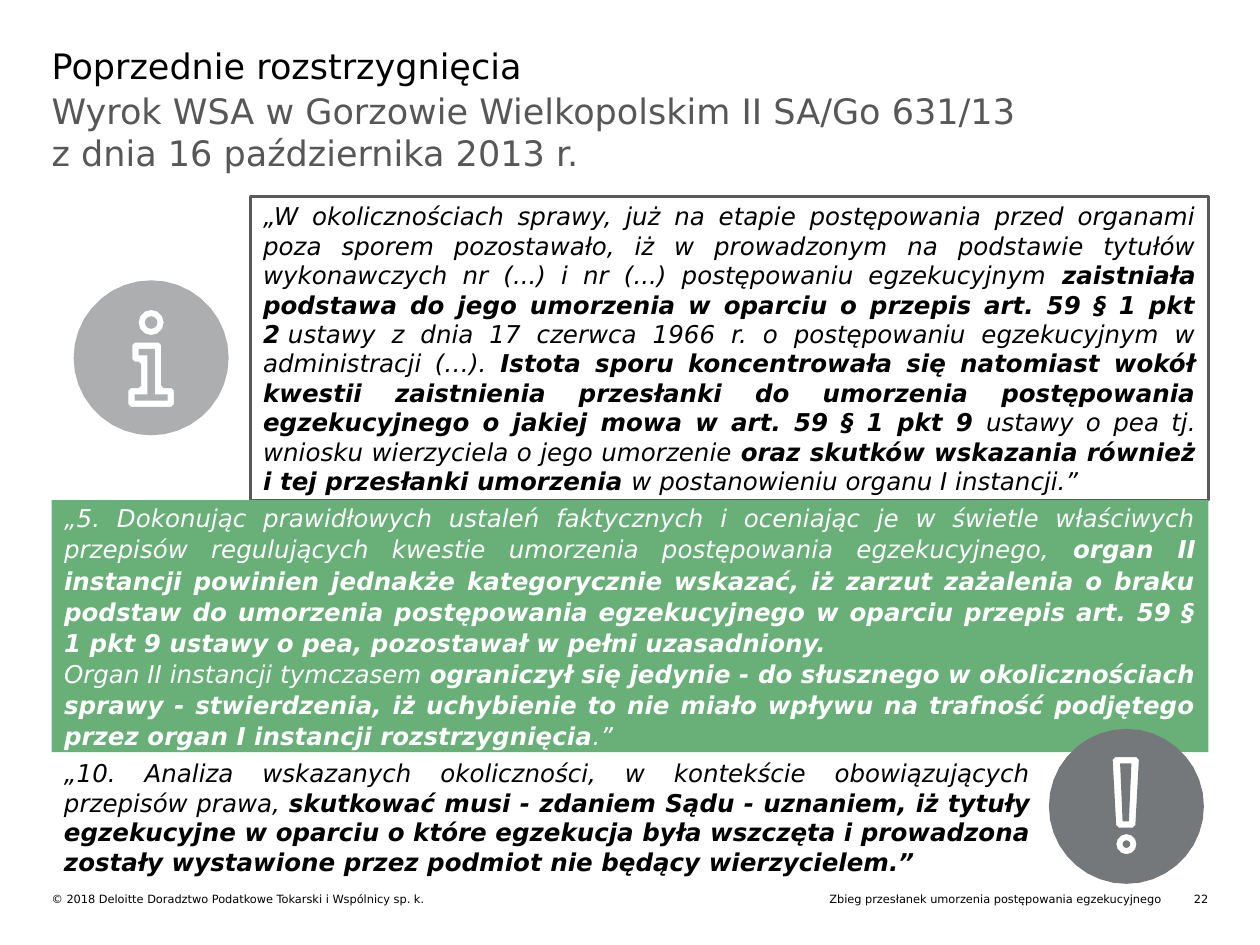
from math import cos, dist, pi, sin

from pptx import Presentation
from pptx.dml.color import RGBColor
from pptx.enum.shapes import MSO_SHAPE
from pptx.enum.text import MSO_ANCHOR, MSO_AUTO_SIZE, PP_ALIGN
from pptx.oxml.ns import qn
from pptx.util import Inches, Pt

RECT = MSO_SHAPE.RECTANGLE
TOP, MIDDLE = MSO_ANCHOR.TOP, MSO_ANCHOR.MIDDLE
LEFT, RIGHT, JUSTIFY = PP_ALIGN.LEFT, PP_ALIGN.RIGHT, PP_ALIGN.JUSTIFY
NO_FIT = MSO_AUTO_SIZE.NONE
NBSP = chr(160)

THEME = {
    "font": "DejaVu Sans",
    "heading": 20, "quote": 14, "footer": 6.5,
    "black": RGBColor(0, 0, 0),
    "white": RGBColor(255, 255, 255),
    "subtitle": RGBColor(0x57, 0x57, 0x57),
    "border": RGBColor(0x58, 0x5A, 0x5C),
    "green": RGBColor(0x69, 0xAF, 0x78),
    "info": RGBColor(0xAC, 0xAE, 0xB0),
    "alert": RGBColor(0x75, 0x78, 0x7B),
}

prs = Presentation()
prs.slide_width, prs.slide_height = Inches(10), Inches(7.5)
s = prs.slides.add_slide(prs.slide_layouts[1])

# Grid: one content column, three stacked quote rows
MARGIN = 0.41
WIDTH = 10 - 2 * MARGIN
INDENT = 1.99
ROWS = (1.56, 3.97, 5.97, 7.01)
FOOTER_TOP = 7.08
DISC = 0.615


def set_text(sp, paragraphs, size, color, align=LEFT, anchor=TOP, inset=0.0,
             italic=False, spacing=1.0):
    """Each paragraph is a list of runs that alternate regular and bold."""
    tf = sp.text_frame
    tf.word_wrap = True
    tf.auto_size = NO_FIT
    tf.vertical_anchor = anchor
    tf.margin_left = tf.margin_right = Inches(inset)
    tf.margin_top = tf.margin_bottom = Inches(inset / 2)
    for i, runs in enumerate(paragraphs):
        p = tf.paragraphs[0] if i == 0 else tf.add_paragraph()
        p.alignment = align
        p.line_spacing = spacing
        p.space_before = Pt(0)
        for j, text in enumerate(runs):
            r = p.add_run()
            r.text = text
            r.font.name = THEME["font"]
            r.font.size = Pt(THEME[size])
            r.font.color.rgb = THEME[color]
            r.font.bold = j % 2 == 1
            r.font.italic = italic


def add_icon(cx, cy, color, dot_y, radii, outer, inner, cut=0.02):
    """Disc with an outlined glyph cut out; glyph points are from its centre."""
    circles = [(0, DISC, 36), *((dot_y, radius, 12) for radius in radii)]
    contours = [
        [(radius * cos(k * 2 * pi / n), y + radius * sin(k * 2 * pi / n)) for k in range(n)]
        for y, radius, n in circles
    ]
    soft = []
    for i, point in enumerate(outer):
        for other in (outer[i - 1], outer[(i + 1) % len(outer)]):
            t = cut / dist(point, other)
            soft.append(tuple(a + (b - a) * t for a, b in zip(point, other)))
    contours += [soft, inner]
    fb = None
    for contour in contours:
        pts = [((cx + x) * 1000, (cy + y) * 1000) for x, y in contour]
        if fb is None:
            fb = s.shapes.build_freeform(*pts[0], scale=Inches(1) / 1000)
        else:
            fb.move_to(*pts[0])
        fb.add_line_segments(pts[1:], close=True)
    sp = fb.convert_to_shape()
    sp.shadow.inherit = False
    sp.fill.solid()
    sp.fill.fore_color.rgb = THEME[color]
    sp.line.fill.background()


# Title and subtitle
title, body = s.shapes.title, s.placeholders[1]
for sp, top, height in ((title, 0.35, 0.44), (body, 0.71, 0.83)):
    sp.left, sp.top = Inches(MARGIN), Inches(top)
    sp.width, sp.height = Inches(WIDTH), Inches(height)
set_text(title, [["Poprzednie rozstrzygnięcia"]], "heading", "black")
p = body.text_frame.paragraphs[0]
pPr = p._p.get_or_add_pPr()
pPr.set("marL", "0")
pPr.set("indent", "0")
pPr.append(pPr.makeelement(qn("a:buNone"), {}))
set_text(body, [["Wyrok WSA w Gorzowie Wielkopolskim II SA/Go 631/13"]],
         "heading", "subtitle")
p.add_line_break()
r = p.add_run()
r.text = "z dnia 16 października 2013 r."
r.font.name = THEME["font"]
r.font.size = Pt(THEME["heading"])
r.font.color.rgb = THEME["subtitle"]

# Quote panels
facts = [[
    "„W okolicznościach sprawy, już na etapie postępowania przed organami poza "
    "sporem pozostawało, iż w prowadzonym na podstawie tytułów wykonawczych "
    "nr (...) i nr (...) postępowaniu egzekucyjnym ",
    "zaistniała podstawa do jego umorzenia w oparciu o przepis art. 59 § 1 pkt 2",
    NBSP + "ustawy z dnia 17 czerwca 1966 r. o postępowaniu egzekucyjnym w "
    "administracji (…). ",
    "Istota sporu koncentrowała się natomiast wokół kwestii zaistnienia "
    "przesłanki do umorzenia postępowania egzekucyjnego o jakiej mowa w "
    "art. 59 § 1 pkt 9",
    " ustawy o pea tj. wniosku wierzyciela o jego umorzenie ",
    "oraz skutków wskazania również i tej przesłanki umorzenia ",
    "w postanowieniu organu I instancji.”",
]]
findings = [[
    "„5. Dokonując prawidłowych ustaleń faktycznych i oceniając je w świetle "
    "właściwych przepisów regulujących kwestie umorzenia postępowania "
    "egzekucyjnego, ",
    "organ II instancji powinien jednakże kategorycznie wskazać, iż zarzut "
    "zażalenia o braku podstaw do umorzenia postępowania egzekucyjnego w "
    "oparciu przepis art. 59 § 1 pkt 9 ustawy o pea, pozostawał w pełni "
    "uzasadniony.",
], [
    "Organ II instancji tymczasem ",
    "ograniczył się jedynie - do słusznego w okolicznościach sprawy - "
    "stwierdzenia, iż uchybienie to nie miało wpływu na trafność podjętego "
    "przez organ I instancji rozstrzygnięcia",
    ".”",
]]
conclusion = [[
    "„10. Analiza wskazanych okoliczności, w kontekście obowiązujących "
    "przepisów prawa, ",
    "skutkować musi - zdaniem Sądu - uznaniem, iż tytuły egzekucyjne w oparciu "
    "o które egzekucja była wszczęta i prowadzona zostały wystawione przez "
    "podmiot nie będący wierzycielem.”",
]]
panels = (
    (INDENT, MARGIN + WIDTH - INDENT, facts, "black", None, "border", 1.0),
    (MARGIN, WIDTH, findings, "white", "green", None, 1.06),
)
for row, (left, width, quote, color, fill, line, spacing) in enumerate(panels):
    sp = s.shapes.add_shape(RECT, Inches(left), Inches(ROWS[row]), Inches(width),
                            Inches(ROWS[row + 1] - ROWS[row]))
    sp.shadow.inherit = False
    if fill:
        sp.fill.solid()
        sp.fill.fore_color.rgb = THEME[fill]
    else:
        sp.fill.background()
    if line:
        sp.line.color.rgb = THEME[line]
        sp.line.width = Pt(1.5)
    else:
        sp.line.fill.background()
    set_text(sp, quote, "quote", color, JUSTIFY, MIDDLE, 0.1, True, spacing)

sp = s.shapes.add_textbox(Inches(MARGIN), Inches(ROWS[2]), Inches(7.87),
                          Inches(ROWS[3] - ROWS[2]))
set_text(sp, conclusion, "quote", "black", JUSTIFY, TOP, 0.1, True)

# Information and exclamation icons
add_icon(1.2, 2.84, "info", -0.28, (0.1, 0.05),
         [(-0.18, 0.39), (0.18, 0.39), (0.18, 0.24), (0.08, 0.24), (0.08, -0.12),
          (-0.15, -0.12), (-0.15, 0.03), (-0.08, 0.03), (-0.08, 0.24), (-0.18, 0.24)],
         [(-0.13, 0.34), (0.13, 0.34), (0.13, 0.29), (0.03, 0.29), (0.03, -0.07),
          (-0.1, -0.07), (-0.1, -0.02), (-0.03, -0.02), (-0.03, 0.29), (-0.13, 0.29)])
add_icon(8.94, 6.4, "alert", 0.3, (0.08, 0.03),
         [(-0.11, -0.39), (0.1, -0.39), (0.07, 0.17), (-0.08, 0.17)],
         [(-0.05, -0.34), (0.04, -0.34), (0.02, 0.12), (-0.03, 0.12)])

# Footer
for left, width, text, align in (
    (MARGIN, 4.39, "© 2018 Deloitte Doradztwo Podatkowe Tokarski i Wspólnicy sp. k.", LEFT),
    (5.2, 4.02, "Zbieg przesłanek umorzenia postępowania egzekucyjnego", RIGHT),
    (9.34, 0.25, "22", RIGHT),
):
    sp = s.shapes.add_textbox(Inches(left), Inches(FOOTER_TOP), Inches(width), Inches(0.11))
    set_text(sp, [[text]], "footer", "black", align)

prs.save("out.pptx")
